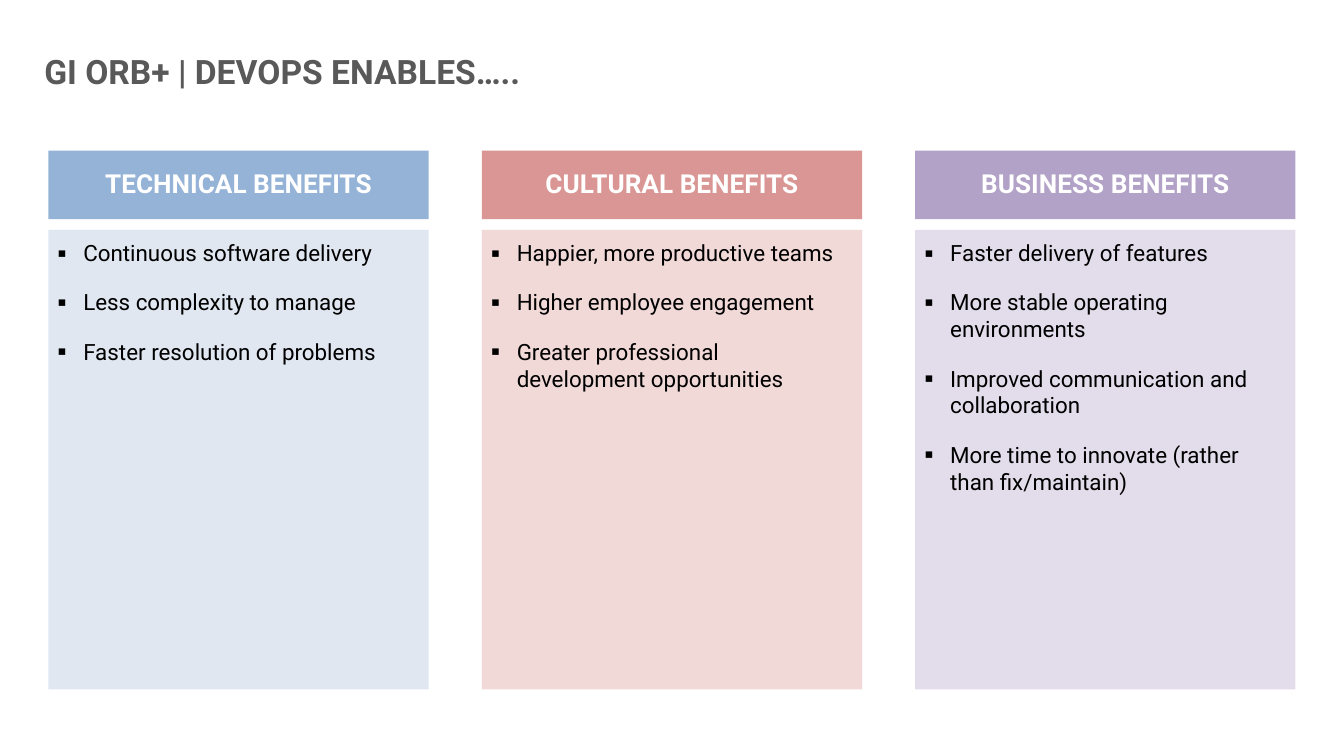
from lxml import etree
from pptx import Presentation
from pptx.dml.color import RGBColor
from pptx.enum.shapes import MSO_SHAPE
from pptx.enum.text import MSO_ANCHOR, PP_ALIGN
from pptx.oxml.ns import qn
from pptx.util import Inches, Pt

RECT = MSO_SHAPE.RECTANGLE
TOP, MIDDLE = MSO_ANCHOR.TOP, MSO_ANCHOR.MIDDLE
LEFT, CENTER = PP_ALIGN.LEFT, PP_ALIGN.CENTER

TITLE = "GI ORB+ | DEVOPS ENABLES….."
COLUMNS = [
    ("TECHNICAL BENEFITS", "95B3D7", "DDE5F0", [
        "Continuous software delivery",
        "Less complexity to manage",
        "Faster resolution of problems",
    ]),
    ("CULTURAL BENEFITS", "D99694", "F0D5D4", [
        "Happier, more productive teams",
        "Higher employee engagement",
        "Greater professional development opportunities",
    ]),
    ("BUSINESS BENEFITS", "B2A2C7", "E0DAE9", [
        "Faster delivery of features",
        "More stable operating environments",
        "Improved communication and collaboration",
        "More time to innovate (rather than fix/maintain)",
    ]),
]

THEME = {
    "font": "Roboto",
    "title": (18, "595959", True),
    "head": (14, "FFFFFF", True),
    "item": (12, "000000", False),
    "alpha": 90,
}

WIDTH = 10
HEIGHT = WIDTH * 9 / 16
MARGIN, COL_W = 0.36, 2.83
STEP = (WIDTH - 2 * MARGIN - COL_W) / (len(COLUMNS) - 1)
HEAD_Y, HEAD_H = 1.12, 0.51
BODY_Y, BODY_H = 1.71, 3.42
INDENT = 0.19


def style(para, role):
    size, color, bold = THEME[role]
    para.font.name = THEME["font"]
    para.font.size = Pt(size)
    para.font.bold = bold
    para.font.color.rgb = RGBColor.from_string(color)


def set_frame(frame, insets, anchor):
    frame.word_wrap = True
    frame.vertical_anchor = anchor
    (frame.margin_left, frame.margin_top,
     frame.margin_right, frame.margin_bottom) = map(Inches, insets)


def add_box(slide, x, y, height, color):
    box = slide.shapes.add_shape(
        RECT, Inches(x), Inches(y), Inches(COL_W), Inches(height))
    box.shadow.inherit = False
    box.fill.solid()
    box.fill.fore_color.rgb = RGBColor.from_string(color)
    box.line.fill.background()
    return box


def fade(box):
    color = box.fill._xPr.find(qn("a:solidFill"))[0]
    etree.SubElement(color, qn("a:alpha"), val=str(THEME["alpha"] * 1000))


def add_bullet(para):
    props = para._p.get_or_add_pPr()
    props.set("marL", str(Inches(INDENT)))
    props.set("indent", str(-Inches(INDENT)))
    etree.SubElement(props, qn("a:buFont"), typeface=THEME["font"])
    etree.SubElement(props, qn("a:buChar"), char="▪")


def add_head(slide, x, text, color):
    frame = add_box(slide, x, HEAD_Y, HEAD_H, color).text_frame
    set_frame(frame, (0.09, 0.05, 0.09, 0.05), MIDDLE)
    para = frame.paragraphs[0]
    para.text = text
    para.alignment = CENTER
    para.line_spacing = 0.9
    style(para, "head")


def add_body(slide, x, items, color):
    box = add_box(slide, x, BODY_Y, BODY_H, color)
    fade(box)
    frame = box.text_frame
    set_frame(frame, (0.07, 0.07, 0.09, 0.1), TOP)
    for i, item in enumerate(items):
        para = frame.add_paragraph() if i else frame.paragraphs[0]
        para.text = item
        para.alignment = LEFT
        para.space_before = Pt(6 if i else 0)
        para.space_after = Pt(6)
        add_bullet(para)
        style(para, "item")


def add_title(slide):
    box = slide.shapes.add_textbox(
        Inches(0.33), Inches(0.33), Inches(8.24), Inches(0.4))
    set_frame(box.text_frame, (0, 0.05, 0.1, 0.05), MIDDLE)
    para = box.text_frame.paragraphs[0]
    para.text = TITLE
    style(para, "title")


def main():
    deck = Presentation()
    deck.slide_width, deck.slide_height = Inches(WIDTH), Inches(HEIGHT)
    slide = deck.slides.add_slide(deck.slide_layouts[6])
    for i, (head, dark, light, items) in enumerate(COLUMNS):
        x = MARGIN + i * STEP
        add_head(slide, x, head, dark)
        add_body(slide, x, items, light)
    add_title(slide)
    deck.save("out.pptx")


if __name__ == "__main__":
    main()
